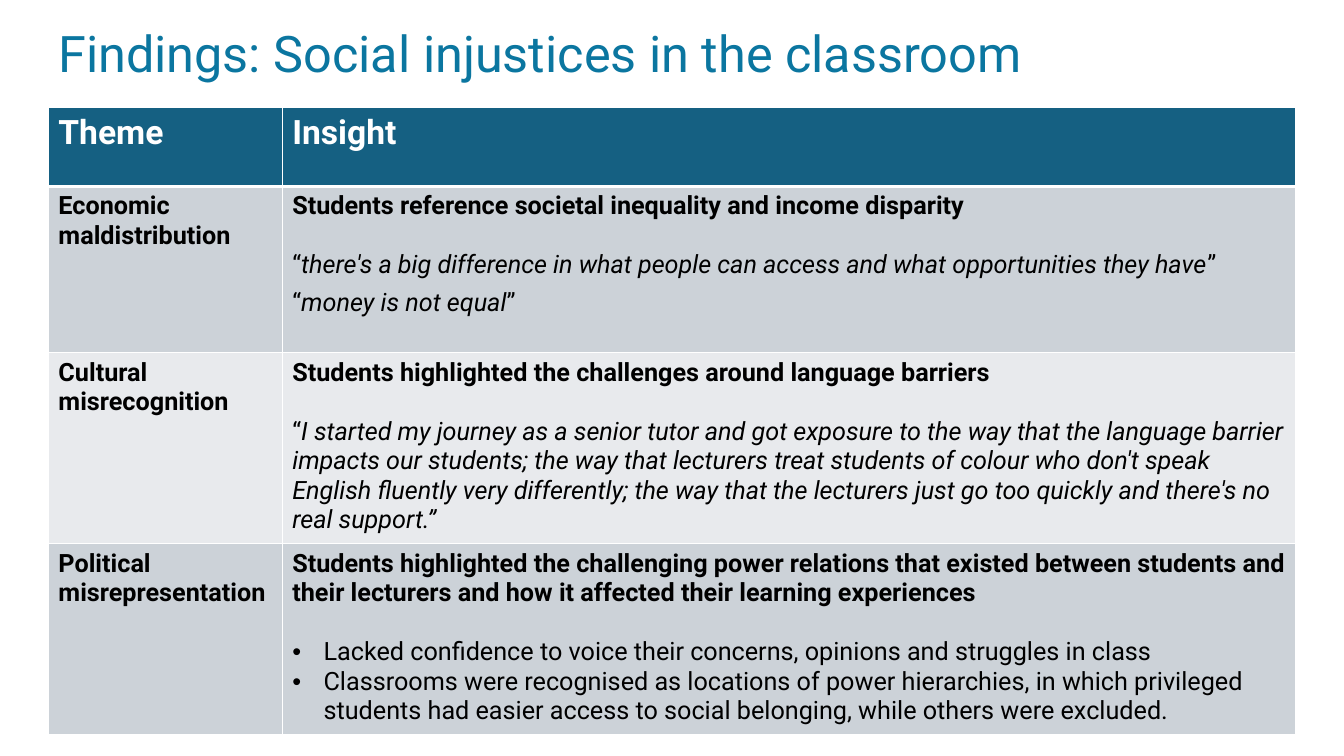
from pptx import Presentation
from pptx.dml.color import RGBColor
from pptx.enum.text import MSO_ANCHOR
from pptx.oxml.ns import qn
from pptx.util import Inches, Pt
from lxml.etree import SubElement

FONT = "Roboto"
LINE = 21.1
BOLD, ITALIC, PLAIN = {"bold": True}, {"italic": True}, {}
ROW_HEIGHTS = [0.78, 1.65, 1.86, 1.86]
COLUMN_WIDTHS = [2.32, 10.05]
BAND_FILLS = ["CCD2D8", "E8EAED"]

FINDINGS = [
    ("Economic maldistribution",
     "Students reference societal inequality and income disparity",
     [(LINE, False, [("“", PLAIN),
                     ("there's a big difference in what people can access and what "
                      "opportunities they have", ITALIC), ("”", PLAIN)]),
      (6, False, [("“", PLAIN), ("money is not equal", ITALIC), ("”", PLAIN)])]),
    ("Cultural misrecognition",
     "Students highlighted the challenges around language barriers",
     [(LINE, False, [("“", PLAIN),
                     ("I started my journey as a senior tutor and got exposure to the way "
                      "that the language barrier impacts our students; the way that "
                      "lecturers treat students of colour who don't speak English fluently "
                      "very differently; the way that the lecturers just go too quickly and "
                      "there's no real support.”", ITALIC)])]),
    ("Political misrepresentation",
     "Students highlighted the challenging power relations that existed between students "
     "and their lecturers and how it affected their learning experiences",
     [(LINE, True, [("Lacked confidence to voice their concerns, opinions and struggles "
                     "in class", PLAIN)]),
      (0, True, [("Classrooms were recognised as locations of power hierarchies, in which "
                  "privileged students had easier access to social belonging, while others "
                  "were excluded.", PLAIN)])]),
]


def colour(hex_value):
    return RGBColor.from_string(hex_value)


def add_run(paragraph, text, size, ink, style):
    run = paragraph.add_run()
    run.text = text
    run.font.color.rgb = colour(ink)
    look = {"name": FONT, "size": Pt(size), "bold": False, "italic": False, **style}
    for key, value in look.items():
        setattr(run.font, key, value)


def add_bullet(paragraph):
    properties = paragraph._p.get_or_add_pPr()
    properties.set("marL", str(Inches(0.31)))
    properties.set("indent", str(-Inches(0.31)))
    SubElement(properties, qn("a:buFont"), typeface="Arial")
    SubElement(properties, qn("a:buChar"), char="•")


def fill_cell(cell, fill, ink, size, paragraphs, bottom_width=1):
    borders = cell._tc.get_or_add_tcPr()
    for side, width in zip("LRTB", (1, 1, 1, bottom_width)):
        border = SubElement(borders, qn(f"a:ln{side}"), w=str(Pt(width)))
        SubElement(SubElement(border, qn("a:solidFill")), qn("a:srgbClr"), val="FFFFFF")
    cell.fill.solid()
    cell.fill.fore_color.rgb = colour(fill)
    frame = cell.text_frame
    for index, (gap, bulleted, runs) in enumerate(paragraphs):
        paragraph = frame.add_paragraph() if index else frame.paragraphs[0]
        paragraph.space_before = Pt(gap)
        if bulleted:
            add_bullet(paragraph)
        for text, style in runs:
            add_run(paragraph, text, size, ink, style)


def add_title(slide, left, top, width, height):
    frame = slide.shapes.add_textbox(*map(Inches, (left, top, width, height))).text_frame
    frame.word_wrap = True
    frame.vertical_anchor = MSO_ANCHOR.MIDDLE
    heading = frame.paragraphs[0]
    heading.line_spacing = 0.9
    add_run(heading, "Findings: Social injustices in the classroom", 36, "0B76A0", PLAIN)


def add_findings(slide, left, top):
    box = map(Inches, (left, top, sum(COLUMN_WIDTHS), sum(ROW_HEIGHTS)))
    table = slide.shapes.add_table(len(ROW_HEIGHTS), len(COLUMN_WIDTHS), *box).table
    for column, width in zip(table.columns, COLUMN_WIDTHS):
        column.width = Inches(width)
    for row, height in zip(table.rows, ROW_HEIGHTS):
        row.height = Inches(height)
    for index, label in enumerate(["Theme", "Insight"]):
        fill_cell(table.cell(0, index), "156082", "FFFFFF", 24,
                  [(0, False, [(label, BOLD)])], bottom_width=3)
    for index, (theme, insight, evidence) in enumerate(FINDINGS):
        fill = BAND_FILLS[index % 2]
        fill_cell(table.cell(index + 1, 0), fill, "000000", 18,
                  [(0, False, [(theme, BOLD)])])
        fill_cell(table.cell(index + 1, 1), fill, "000000", 18,
                  [(0, False, [(insight, BOLD)]), *evidence])


def main():
    deck = Presentation()
    deck.slide_width, deck.slide_height = Inches(13.33), Inches(7.5)
    slide = deck.slides.add_slide(deck.slide_layouts[6])
    add_title(slide, 0.48, 0.15, 11.94, 0.81)
    add_findings(slide, 0.48, 1.07)
    deck.save("out.pptx")


if __name__ == "__main__":
    main()
